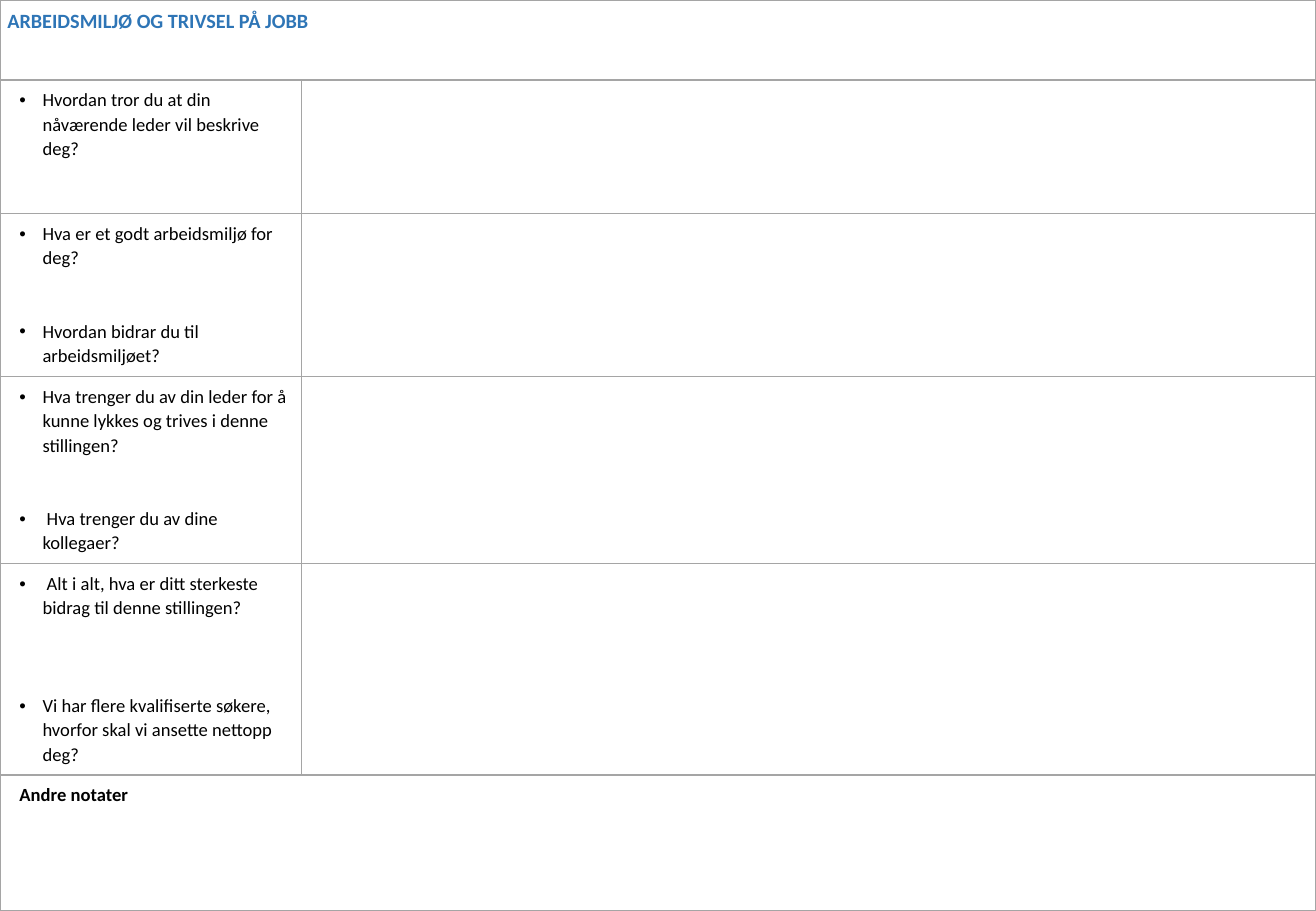
from dataclasses import dataclass

from lxml.etree import SubElement
from pptx import Presentation
from pptx.dml.color import RGBColor as Color
from pptx.oxml.ns import qn
from pptx.table import Table, _Cell as Cell
from pptx.text.text import _Paragraph as Paragraph
from pptx.util import Inches, Pt


@dataclass(frozen=True)
class Theme:
    font: str = "Calibri"
    heading: Color = Color(0x2E, 0x75, 0xB6)
    text: Color = Color(0, 0, 0)
    paper: Color = Color(255, 255, 255)
    rule: Color = Color(0xA5, 0xA5, 0xA5)
    rule_width: int = Pt(1)
    heading_size: int = Pt(12)
    text_size: int = Pt(11)
    line_spacing: float = 1.07
    answer_line: float = 14.4  # points in one line left free for an answer
    margin: int = Inches(0.06)
    indent: int = Inches(0.1)
    bullet_indent: int = Inches(0.29)
    bullet_hang: int = Inches(-0.19)


@dataclass(frozen=True)
class Line:
    text: str
    lines_before: int = 0
    bullet: bool = True
    bold: bool = False
    heading: bool = False


@dataclass(frozen=True)
class Row:
    units: int
    lines: tuple[Line, ...]
    full_width: bool = False


THEME = Theme()

# Grid: one unit is a hundredth of an inch
UNIT = Inches(0.01)
COLUMNS = (248, 835)
ROWS = (
    Row(66, (Line("ARBEIDSMILJØ OG TRIVSEL PÅ JOBB", bullet=False, bold=True, heading=True),),
        full_width=True),
    Row(110, (Line("Hvordan tror du at din nåværende leder vil beskrive deg?"),)),
    Row(134, (Line("Hva er et godt arbeidsmiljø for deg?"),
              Line("Hvordan bidrar du til arbeidsmiljøet?", lines_before=2))),
    Row(154, (Line("Hva trenger du av din leder for å kunne lykkes og trives i denne stillingen?"),
              Line(" Hva trenger du av dine kollegaer?", lines_before=2))),
    Row(174, (Line(" Alt i alt, hva er ditt sterkeste bidrag til denne stillingen?"),
              Line("Vi har flere kvalifiserte søkere, hvorfor skal vi ansette nettopp deg?",
                   lines_before=3))),
    Row(112, (Line("Andre notater", bullet=False, bold=True),), full_width=True),
)


def apply_format(target: object, values: dict[str, object]) -> None:
    for name, value in values.items():
        setattr(target, name, value)


def style_cell(cell: Cell) -> None:
    apply_format(cell, {f"margin_{side}": THEME.margin
                        for side in ("left", "right", "top", "bottom")})
    properties = cell._tc.get_or_add_tcPr()
    for side in "LRTB":
        border = SubElement(properties, qn(f"a:ln{side}"), w=str(THEME.rule_width))
        fill = SubElement(border, qn("a:solidFill"))
        SubElement(fill, qn("a:srgbClr"), val=str(THEME.rule))
    cell.fill.solid()
    cell.fill.fore_color.rgb = THEME.paper


def indent_paragraph(paragraph: Paragraph, line: Line) -> None:
    properties = paragraph._p.get_or_add_pPr()
    if line.bullet:
        properties.set("marL", str(THEME.bullet_indent))
        properties.set("indent", str(THEME.bullet_hang))
        SubElement(properties, qn("a:buFont"), typeface="Arial")
        SubElement(properties, qn("a:buChar"), char="•")
    elif not line.heading:
        properties.set("marL", str(THEME.indent))


def write_line(paragraph: Paragraph, line: Line) -> None:
    apply_format(paragraph, {
        "line_spacing": THEME.line_spacing,
        "space_before": Pt(line.lines_before * THEME.answer_line),
    })
    indent_paragraph(paragraph, line)
    run = paragraph.add_run()
    run.text = line.text
    apply_format(run.font, {
        "name": THEME.font,
        "size": THEME.heading_size if line.heading else THEME.text_size,
        "bold": line.bold,
    })
    run.font.color.rgb = THEME.heading if line.heading else THEME.text


def fill_row(table: Table, index: int, row: Row) -> None:
    table.rows[index].height = row.units * UNIT
    cells = [table.cell(index, column) for column in range(len(COLUMNS))]
    for cell in cells:
        style_cell(cell)
    if row.full_width:
        cells[0].merge(cells[-1])
    frame = cells[0].text_frame
    for number, line in enumerate(row.lines):
        write_line(frame.add_paragraph() if number else frame.paragraphs[0], line)


def main() -> None:
    presentation = Presentation()
    apply_format(presentation, {
        "slide_width": sum(COLUMNS) * UNIT,
        "slide_height": sum(row.units for row in ROWS) * UNIT,
    })
    slide = presentation.slides.add_slide(presentation.slide_layouts[6])

    # Interview form across the whole slide
    table = slide.shapes.add_table(len(ROWS), len(COLUMNS), 0, 0, presentation.slide_width,
                                   presentation.slide_height).table
    apply_format(table, {"first_row": False, "horz_banding": False})
    for column, units in zip(table.columns, COLUMNS):
        column.width = units * UNIT
    for index, row in enumerate(ROWS):
        fill_row(table, index, row)

    presentation.save("out.pptx")


if __name__ == "__main__":
    main()
